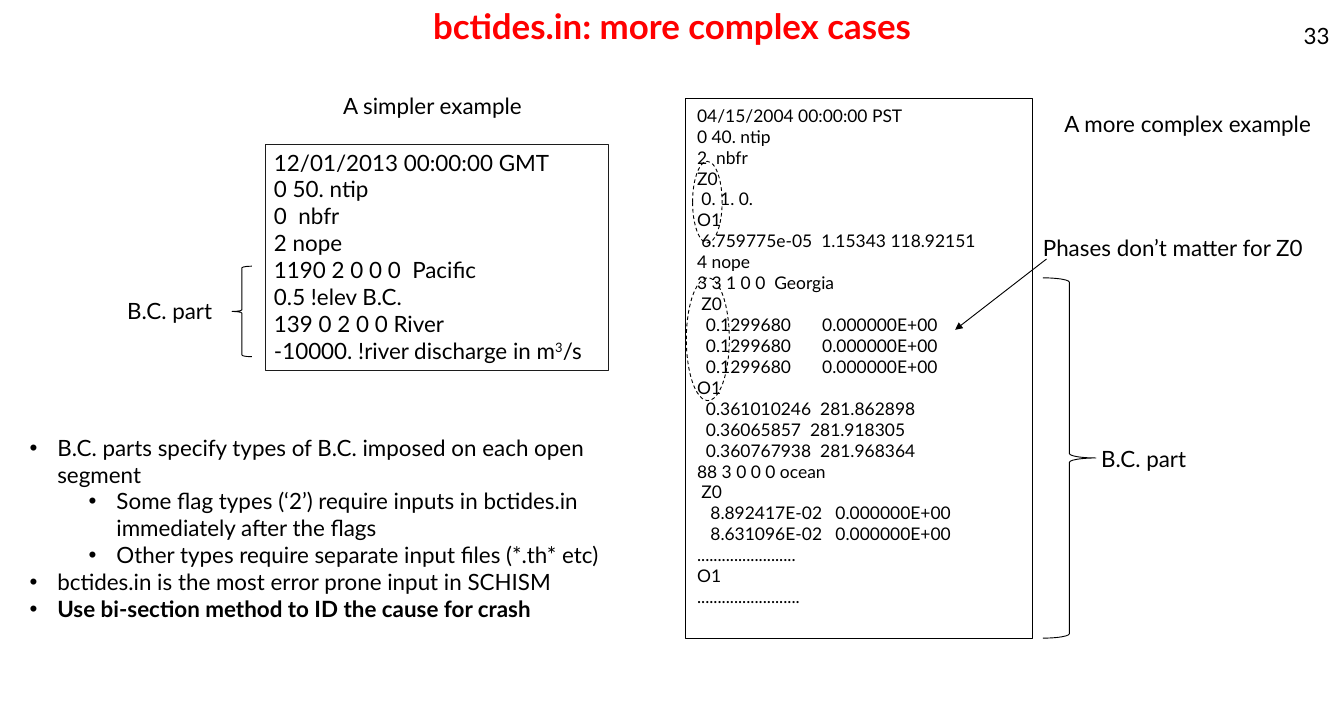
from dataclasses import dataclass, field
from typing import NamedTuple

from lxml.etree import SubElement
from pptx import Presentation
from pptx.dml.color import RGBColor
from pptx.enum.dml import MSO_LINE
from pptx.enum.shapes import MSO_CONNECTOR, MSO_SHAPE
from pptx.enum.text import MSO_ANCHOR, MSO_AUTO_SIZE, PP_ALIGN
from pptx.oxml import parse_xml
from pptx.oxml.ns import nsdecls, qn
from pptx.util import Inches, Pt


@dataclass(frozen=True)
class Theme:
    font: str = "Lato"
    ink: RGBColor = field(default_factory=lambda: RGBColor(0, 0, 0))
    soft_ink: RGBColor = field(default_factory=lambda: RGBColor(0x1C, 0x1C, 0x1C))
    accent: RGBColor = field(default_factory=lambda: RGBColor(0xFF, 0, 0))
    title_size: int = 28
    text_size: int = 18
    listing_size: int = 14
    line_width: float = 0.75


class Place(NamedTuple):
    """Left, top, width and height in grid columns and rows."""
    left: float
    top: float
    width: float
    height: float


class Inset(NamedTuple):
    """Text margins in grid columns and rows."""
    side: float
    end: float


class Label(NamedTuple):
    text: str
    place: Place
    inset: Inset


class Outline(NamedTuple):
    kind: MSO_SHAPE
    place: Place
    dashed: bool = False


class Listing(NamedTuple):
    text: str
    place: Place
    inset: Inset
    size: int
    line_color: RGBColor


class Point(NamedTuple):
    text: str
    level: int = 0
    bold: bool = False


THEME = Theme()
COLUMNS, ROWS = 150, 80
CELL = Inches(0.1)
NARROW, WIDE = Inset(1, 0.5), Inset(1.3, 0.7)
INDENTS, HANGING = (3.1, 9.7), 3.1

TITLE_PLACE = Place(0, 1.1, COLUMNS, 4.8)
NUMBER_PLACE = Place(139.7, 0.9, 10, 5.3)
POINTS_PLACE = Place(2.3, 47.9, 72.5, 22.2)

# A caret marks the superscript character that follows it
SIMPLE_INPUT = """12/01/2013 00:00:00 GMT
0 50. ntip
0  nbfr
2 nope
1190 2 0 0 0  Pacific
0.5 !elev B.C.
139 0 2 0 0 River
-10000. !river discharge in m^3/s"""

COMPLEX_INPUT = """04/15/2004 00:00:00 PST
0 40. ntip
2  nbfr
Z0
 0. 1. 0.
O1
 6.759775e-05  1.15343 118.92151
4 nope
3 3 1 0 0  Georgia
 Z0
  0.1299680       0.000000E+00
  0.1299680       0.000000E+00
  0.1299680       0.000000E+00
O1
  0.361010246  281.862898
  0.36065857  281.918305
  0.360767938  281.968364
88 3 0 0 0 ocean
 Z0
   8.892417E-02   0.000000E+00
   8.631096E-02   0.000000E+00
........................
O1
........................."""

LISTINGS = (
    Listing(SIMPLE_INPUT, Place(29.6, 16.1, 38.3, 25.2), NARROW, THEME.text_size, THEME.soft_ink),
    Listing(COMPLEX_INPUT, Place(76.5, 11, 38.7, 60.2), WIDE, THEME.listing_size, THEME.ink),
)
LABELS = (
    Label("A simpler example", Place(37.3, 9.8, 22.5, 4), NARROW),
    Label("B.C. part", Place(13.2, 32.7, 11.8, 4), NARROW),
    Label("Phases don’t matter for Z0", Place(115.1, 25.4, 32.3, 4.4), WIDE),
    Label("A more complex example", Place(117.8, 11.8, 30.2, 4), NARROW),
    Label("B.C. part", Place(121.9, 49.2, 11.8, 4), NARROW),
)
OUTLINES = (
    Outline(MSO_SHAPE.LEFT_BRACE, Place(25.9, 29.7, 2.2, 10.1)),
    Outline(MSO_SHAPE.RIGHT_BRACE, Place(116.4, 31, 5.9, 40.2)),
    Outline(MSO_SHAPE.OVAL, Place(77.3, 18, 3.3, 9.1), True),
    Outline(MSO_SHAPE.OVAL, Place(76.6, 31, 4.8, 13.7), True),
)
POINTS = (
    Point("B.C. parts specify types of B.C. imposed on each open segment"),
    Point("Some flag types (‘2’) require inputs in bctides.in immediately after the flags", 1),
    Point("Other types require separate input files (*.th* etc)", 1),
    Point("bctides.in is the most error prone input in SCHISM"),
    Point("Use bi-section method to ID the cause for crash", bold=True),
)


def cells(*counts: float) -> list[int]:
    return [round(count * CELL) for count in counts]


def move(shape, place: Place) -> None:
    shape.left, shape.top, shape.width, shape.height = cells(*place)


def set_frame(frame, inset: Inset, anchor=MSO_ANCHOR.TOP, wrap: bool = True) -> None:
    side, end = cells(*inset)
    frame.margin_left = frame.margin_right = side
    frame.margin_top = frame.margin_bottom = end
    frame.vertical_anchor, frame.word_wrap = anchor, wrap
    frame.auto_size = MSO_AUTO_SIZE.NONE if wrap else MSO_AUTO_SIZE.SHAPE_TO_FIT_TEXT


def style(para, size: int = THEME.text_size, color: RGBColor = THEME.ink,
          bold: bool = False, align=PP_ALIGN.LEFT) -> None:
    para.alignment = align
    para.font.name, para.font.size = THEME.font, Pt(size)
    para.font.bold, para.font.color.rgb = bold, color


def add_outline(slide, outline: Outline, color: RGBColor = THEME.ink):
    shape = slide.shapes.add_shape(outline.kind, *cells(*outline.place))
    shape.shadow.inherit = False
    shape.fill.background()
    shape.line.color.rgb, shape.line.width = color, Pt(THEME.line_width)
    if outline.dashed:
        shape.line.dash_style = MSO_LINE.DASH
    return shape


def add_listing(slide, listing: Listing) -> None:
    box = add_outline(slide, Outline(MSO_SHAPE.RECTANGLE, listing.place), listing.line_color)
    frame = box.text_frame
    set_frame(frame, listing.inset)
    for index, line in enumerate(listing.text.splitlines()):
        para = frame.add_paragraph() if index else frame.paragraphs[0]
        style(para, listing.size)
        before, caret, after = line.partition("^")
        para.add_run().text = before
        if caret:
            span = para.add_run()
            span.text = after[0]
            span._r.get_or_add_rPr().set("baseline", "30000")
            para.add_run().text = after[1:]


def add_label(slide, label: Label) -> None:
    frame = slide.shapes.add_textbox(*cells(*label.place)).text_frame
    set_frame(frame, label.inset, wrap=False)
    frame.text = label.text
    style(frame.paragraphs[0])


def add_arrow(slide, start: tuple[float, float], end: tuple[float, float]) -> None:
    arrow = slide.shapes.add_connector(MSO_CONNECTOR.STRAIGHT, *cells(*start, *end))
    arrow.line.color.rgb, arrow.line.width = THEME.ink, Pt(THEME.line_width)
    SubElement(arrow.line._get_or_add_ln(), qn("a:tailEnd"), type="triangle")
    SubElement(arrow._element.spPr, qn("a:effectLst"))


def fill_points(body, points: tuple[Point, ...]) -> None:
    set_frame(body.text_frame, NARROW)
    for index, point in enumerate(points):
        para = body.text_frame.add_paragraph() if index else body.text_frame.paragraphs[0]
        para.text, para.level = point.text, point.level
        para.space_before = Pt(0)
        style(para, bold=point.bold)
        properties = para._p.get_or_add_pPr()
        margin, hanging = cells(INDENTS[point.level], HANGING)
        properties.set("marL", str(margin))
        properties.set("indent", str(-hanging))
        for tag in ('buFont {} typeface="Arial"', 'buChar {} char="•"'):
            bullet = parse_xml(f"<a:{tag.format(nsdecls('a'))}/>")
            properties.insert_element_before(bullet, "a:tabLst", "a:defRPr", "a:extLst")


def main() -> None:
    deck = Presentation()
    deck.slide_width, deck.slide_height = cells(COLUMNS, ROWS)
    page = deck.slides.add_slide(deck.slide_layouts[1])
    title, body = page.placeholders

    # Title and slide number
    move(title, TITLE_PLACE)
    set_frame(title.text_frame, WIDE, MSO_ANCHOR.BOTTOM)
    title.text_frame.text = "bctides.in: more complex cases"
    style(title.text_frame.paragraphs[0], THEME.title_size, THEME.accent, True, PP_ALIGN.CENTER)
    number = page.shapes.add_textbox(*cells(*NUMBER_PLACE)).text_frame
    set_frame(number, WIDE, MSO_ANCHOR.BOTTOM)
    number.text = "33"
    style(number.paragraphs[0], align=PP_ALIGN.RIGHT)

    # Bulleted points
    move(body, POINTS_PLACE)
    fill_points(body, POINTS)

    # Input files with their labels and marks
    for listing in LISTINGS:
        add_listing(page, listing)
    for label in LABELS:
        add_label(page, label)
    for outline in OUTLINES:
        add_outline(page, outline)
    add_arrow(page, (116.8, 28.9), (106.6, 36.8))

    deck.save("out.pptx")


if __name__ == "__main__":
    main()
